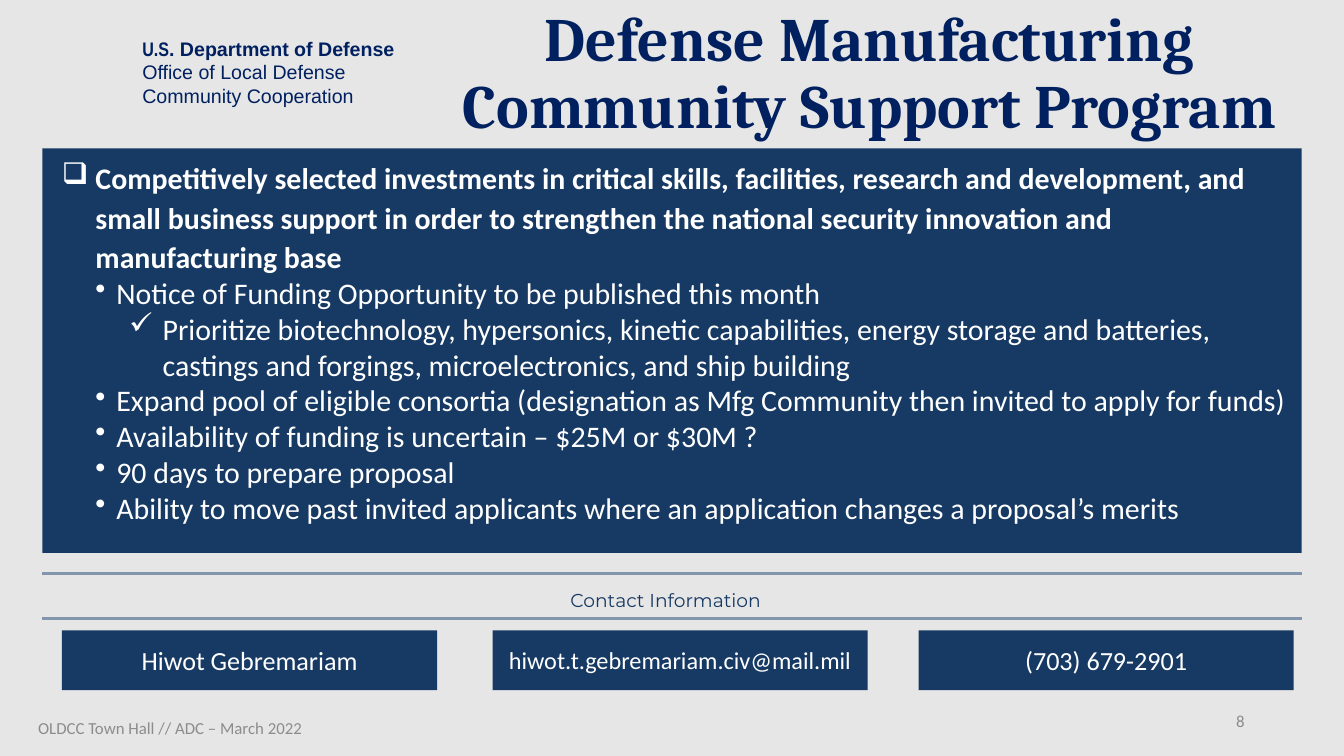
from dataclasses import dataclass

from lxml import etree
from pptx import Presentation
from pptx import util as u
from pptx.dml.color import RGBColor
from pptx.enum import shapes, text
from pptx.oxml import ns


@dataclass(frozen=True)
class Theme:
    page = RGBColor.from_string("E7E6E6")
    navy = RGBColor.from_string("002060")
    panel = RGBColor.from_string("173A64")
    rule = RGBColor.from_string("8395AA")
    grey = RGBColor.from_string("8C8C8C")
    white = RGBColor.from_string("FFFFFF")
    title_size = u.Pt(66)
    body_size = u.Pt(32)
    card_size = u.Pt(28)
    email_size = u.Pt(26)
    agency_size = u.Pt(21)
    label_size = u.Pt(20)
    footer_size = u.Pt(18)


theme = Theme()
align = text.PP_ALIGN


def add_box(left, top, width, height, fill=None):
    """Add a filled rectangle, or a plain text box when no fill is given."""
    place = [u.Cm(value) for value in (left, top, width, height)]
    if fill is None:
        box = page.shapes.add_textbox(*place)
    else:
        box = page.shapes.add_shape(shapes.MSO_SHAPE.RECTANGLE, *place)
        box.shadow.inherit = False
        box.fill.solid()
        box.fill.fore_color.rgb = fill
        box.line.fill.background()
    box.text_frame.word_wrap = True
    return box


def style(para, size, color, font="Calibri", bold=False, alignment=align.LEFT):
    para.alignment = alignment
    para.font.size = size
    para.font.name = font
    para.font.bold = bold
    para.font.color.rgb = color


deck = Presentation()
deck.slide_width, deck.slide_height = u.Cm(50.8), u.Cm(28.58)
page = deck.slides.add_slide(deck.slide_layouts[5])
page.background.fill.solid()
page.background.fill.fore_color.rgb = theme.page

# Title
title = page.shapes.title
title.left, title.top = u.Cm(15.21), u.Cm(0.2)
title.width, title.height = u.Cm(35.31), u.Cm(5.51)
frame = title.text_frame
frame.text = "Defense Manufacturing Community Support Program"
frame.word_wrap = True
frame.auto_size = text.MSO_AUTO_SIZE.NONE
frame.vertical_anchor = text.MSO_ANCHOR.TOP
frame.paragraphs[0].line_spacing = 0.9
style(frame.paragraphs[0], theme.title_size, theme.navy, "Cambria", True, align.CENTER)

# Agency name
frame = add_box(5.13, 1.27, 10.13, 2.95).text_frame
frame.word_wrap = False
frame.text = "\nOffice of Local Defense\nCommunity Cooperation"
for index, para in enumerate(frame.paragraphs):
    style(para, theme.agency_size, theme.navy, "Arial", index == 0)
for words, font in (("U.S", "Arial Narrow"), (". Department of Defense", "Arial")):
    span = frame.paragraphs[0].add_run()
    span.text = words
    span.font.name = font

# Main panel: marker, left margin and hanging indent for each outline level
levels = [("❑", 1.27, 1.27), ("•", 2.06, 0.79), ("✓", 3.81, 1.27)]
points = [
    (0, "Competitively selected investments in critical skills, facilities, research and "
        "development, and small business support in order to strengthen the national "
        "security innovation and manufacturing base"),
    (1, "Notice of Funding Opportunity to be published this month"),
    (2, "Prioritize biotechnology, hypersonics, kinetic capabilities, energy storage and "
        "batteries, castings and forgings, microelectronics, and ship building"),
    (1, "Expand pool of eligible consortia (designation as Mfg Community then invited "
        "to apply for funds)"),
    (1, "Availability of funding is uncertain – $25M or $30M ?"),
    (1, "90 days to prepare proposal"),
    (1, "Ability to move past invited applicants where an application changes a "
        "proposal’s merits"),
]
frame = add_box(1.6, 5.61, 47.6, 15.29, theme.panel).text_frame
frame.vertical_anchor = text.MSO_ANCHOR.TOP
frame.margin_left, frame.margin_right = u.Cm(0.74), u.Cm(0.5)
frame.margin_top, frame.margin_bottom = u.Cm(0.3), u.Cm(0)
frame.text = "\n".join(words for _, words in points)
for para, (level, _) in zip(frame.paragraphs, points):
    marker, margin, hang = levels[level]
    para.level = level
    properties = para._p.get_or_add_pPr()
    properties.set("marL", str(u.Cm(margin)))
    properties.set("indent", str(-u.Cm(hang)))
    etree.SubElement(properties, ns.qn("a:buChar"), char=marker)
    para.line_spacing = 1.1 if level == 0 else 1.0
    style(para, theme.body_size, theme.white, bold=level == 0)

# Contact heading between two rules
for height in (21.69, 23.39):
    rule = page.shapes.add_connector(
        shapes.MSO_CONNECTOR.STRAIGHT, u.Cm(1.6), u.Cm(height), u.Cm(49.2), u.Cm(height))
    rule.line.color.rgb = theme.rule
    rule.line.width = u.Pt(3.75)
    etree.SubElement(rule._element.spPr, ns.qn("a:effectLst"))

frame = add_box(17.5, 22.12, 15.32, 0.94).text_frame
frame.margin_left = frame.margin_right = frame.margin_top = frame.margin_bottom = 0
frame.text = "Contact Information"
frame.paragraphs[0].line_spacing = u.Pt(28)
style(frame.paragraphs[0], theme.label_size, theme.panel, "Montserrat", alignment=align.CENTER)

# Contact cards
cards = [
    (2.34, "Hiwot Gebremariam", theme.card_size),
    (18.62, "hiwot.t.gebremariam.civ@mail.mil", theme.email_size),
    (34.72, "(703) 679-2901", theme.card_size),
]
for left, words, size in cards:
    frame = add_box(left, 23.83, 14.18, 2.26, theme.panel).text_frame
    frame.vertical_anchor = text.MSO_ANCHOR.MIDDLE
    frame.text = words
    style(frame.paragraphs[0], size, theme.white, alignment=align.CENTER)

# Footer and page number
footers = [
    (0.64, 26.77, 11.58, "OLDCC Town Hall // ADC – March 2022", align.CENTER),
    (35.86, 26.49, 11.43, "8", align.RIGHT),
]
for left, top, width, words, alignment in footers:
    frame = add_box(left, top, width, 1.52).text_frame
    frame.vertical_anchor = text.MSO_ANCHOR.MIDDLE
    frame.text = words
    style(frame.paragraphs[0], theme.footer_size, theme.grey, alignment=alignment)

deck.save("out.pptx")
